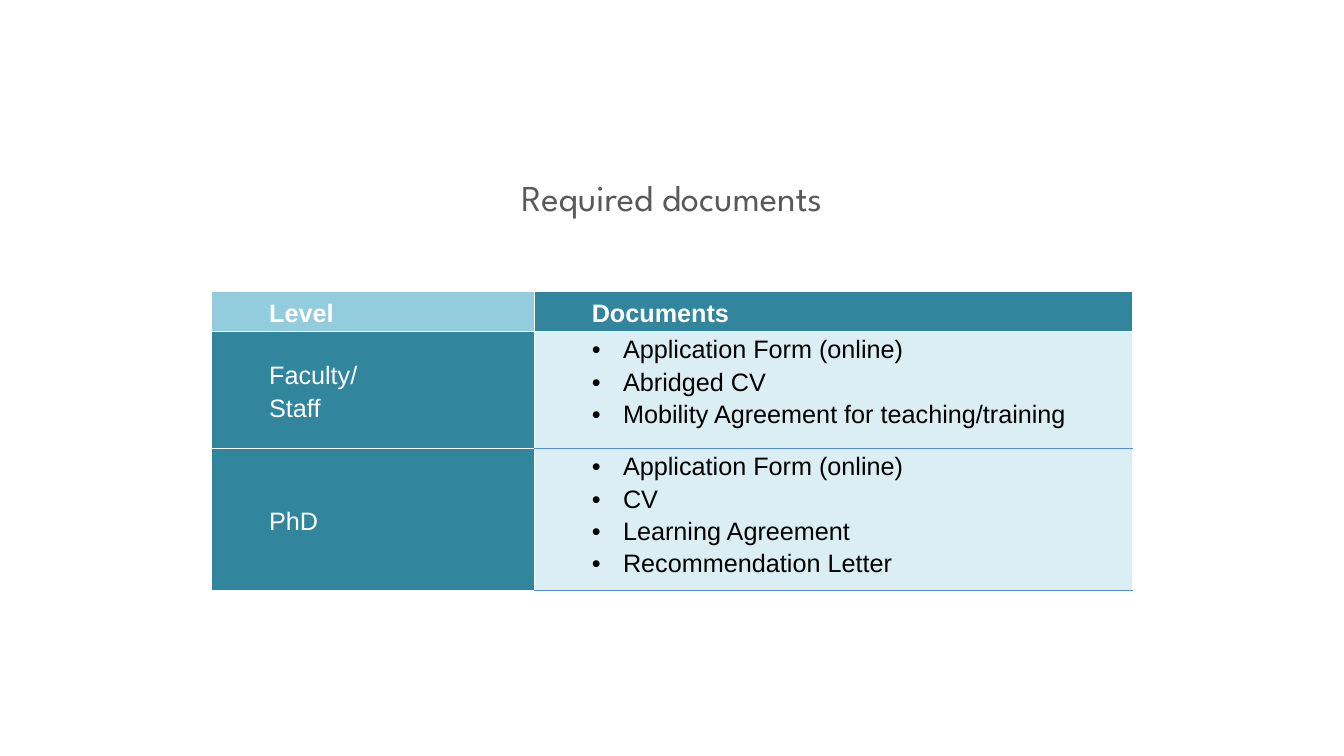
from lxml.etree import SubElement
from pptx import Presentation
from pptx.dml.color import RGBColor
from pptx.enum.text import MSO_ANCHOR, PP_ALIGN
from pptx.oxml.ns import qn
from pptx.util import Inches, Pt

COLORS = {
    "white": "FFFFFF", "black": "000000", "gray": "595959",
    "sky": "93CDDD", "teal": "31859C", "pale": "DBEEF4", "blue": "558ED5",
}
HEADS = ["Level", "Documents"]
LEVELS = [
    (["Faculty/", "Staff"],
     ["Application Form (online)", "Abridged CV",
      "Mobility Agreement for teaching/training"]),
    (["PhD"],
     ["Application Form (online)", "CV", "Learning Agreement",
      "Recommendation Letter"]),
]
WIDTHS = [3.2, 5.93]
HEIGHTS = [0.4, 1.16, 1.41]


def color(name):
    return RGBColor.from_string(COLORS[name])


def add_run(para, text, font, size, ink, bold=False):
    run = para.add_run()
    run.text = text
    run.font.name = font
    run.font.size = Pt(size)
    run.font.bold = bold
    run.font.color.rgb = color(ink)


def add_title(slide, text):
    title = slide.shapes.title
    title.left, title.top = Inches(0), Inches(1.69)
    title.width, title.height = Inches(13.33), Inches(0.79)
    frame = title.text_frame
    frame.word_wrap = True
    frame.vertical_anchor = MSO_ANCHOR.TOP
    para = frame.paragraphs[0]
    para.alignment = PP_ALIGN.CENTER
    add_run(para, text, "League Spartan", 26, "gray")


def set_edges(cell, top="white", bottom="white"):
    props = cell._tc.get_or_add_tcPr()
    edges = [("L", "white"), ("R", "white"), ("T", top), ("B", bottom)]
    for side, ink in edges:
        line = SubElement(props, qn(f"a:ln{side}"), w=str(Pt(1)))
        fill = SubElement(line, qn("a:solidFill"))
        SubElement(fill, qn("a:srgbClr"), val=COLORS[ink])


def set_indent(para, left, first=0, bullet=None):
    props = para._p.get_or_add_pPr()
    props.set("marL", str(Inches(left)))
    props.set("indent", str(Inches(first)))
    if bullet:
        SubElement(props, qn("a:buFont"), typeface="Arial")
        SubElement(props, qn("a:buChar"), char=bullet)


def fill_cell(cell, lines, fill, ink="white", bold=False, bullet=None,
              top="white", bottom="white"):
    set_edges(cell, top, bottom)
    cell.fill.solid()
    cell.fill.fore_color.rgb = color(fill)
    cell.margin_left = cell.margin_right = Inches(0.07)
    cell.margin_top = cell.margin_bottom = Inches(0)
    cell.vertical_anchor = MSO_ANCHOR.TOP if bullet else MSO_ANCHOR.MIDDLE
    frame = cell.text_frame
    for i, text in enumerate(lines):
        para = frame.add_paragraph() if i else frame.paragraphs[0]
        para.line_spacing = 1.15
        if bullet:
            set_indent(para, 0.81, -0.31, bullet)
        else:
            set_indent(para, 0.5)
        add_run(para, text, "Arial", 18, ink, bold)


def add_grid(slide):
    frame = slide.shapes.add_table(
        len(HEIGHTS), len(WIDTHS), Inches(2.1), Inches(2.89),
        Inches(sum(WIDTHS)), Inches(sum(HEIGHTS)))
    table = frame.table
    for col, width in zip(table.columns, WIDTHS):
        col.width = Inches(width)
    for row, height in zip(table.rows, HEIGHTS):
        row.height = Inches(height)

    # Header row
    for i, (head, fill) in enumerate(zip(HEADS, ["sky", "teal"])):
        fill_cell(table.cell(0, i), [head], fill, bold=True)

    # One row for each level
    for i, (level, papers) in enumerate(LEVELS, 1):
        fill_cell(table.cell(i, 0), level, "teal")
        fill_cell(table.cell(i, 1), papers, "pale", "black", bullet="•",
                  top="white" if i == 1 else "blue", bottom="blue")


def main():
    deck = Presentation()
    deck.slide_width, deck.slide_height = Inches(13.33), Inches(7.5)
    slide = deck.slides.add_slide(deck.slide_layouts[5])
    add_title(slide, "Required documents")
    add_grid(slide)
    deck.save("out.pptx")


if __name__ == "__main__":
    main()
